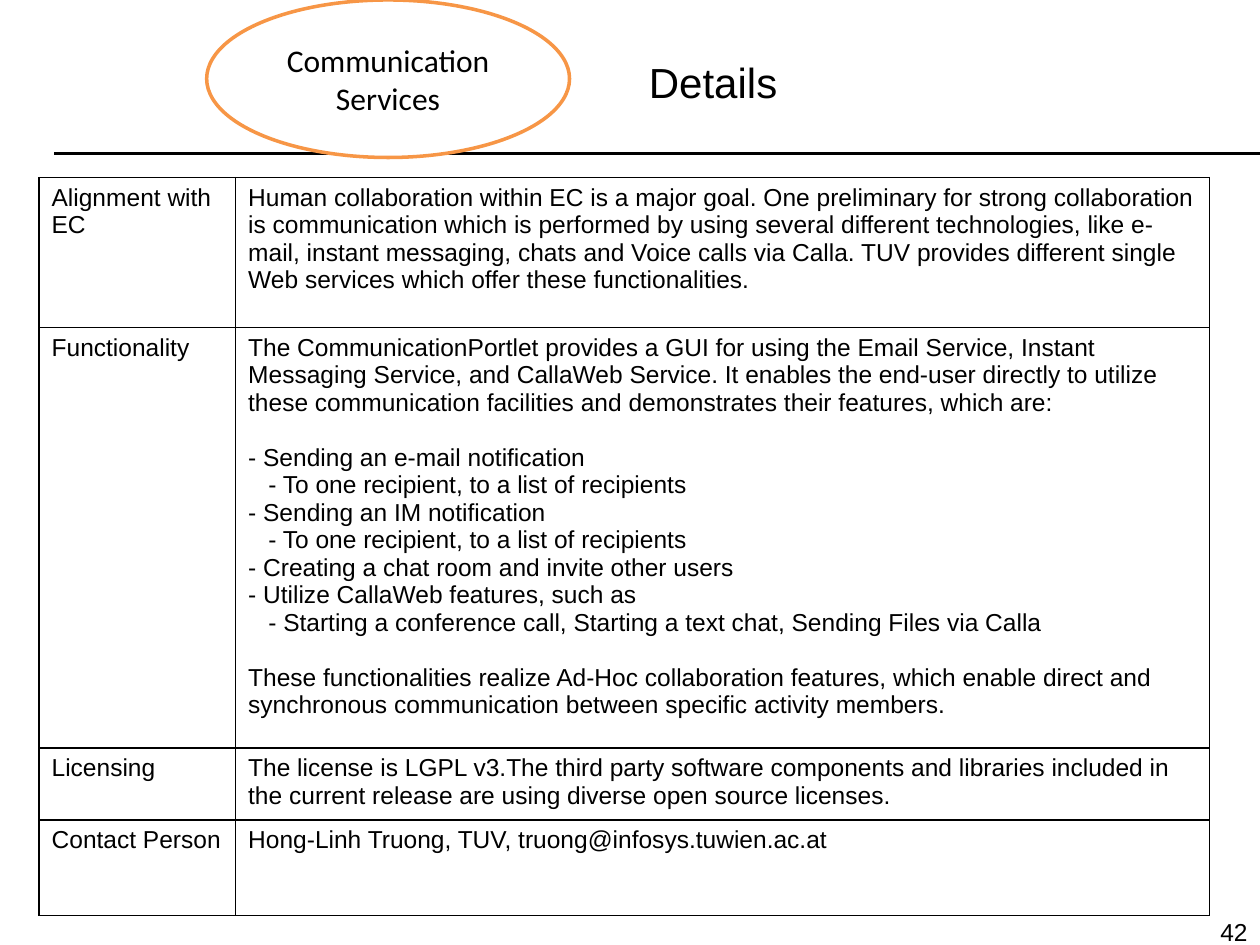
from lxml.etree import SubElement
from pptx import Presentation
from pptx.dml.color import RGBColor
from pptx.enum.shapes import MSO_CONNECTOR, MSO_SHAPE
from pptx.enum.text import MSO_ANCHOR, PP_ALIGN
from pptx.oxml.ns import qn
from pptx.util import Inches, Pt

BLACK = RGBColor(0x00, 0x00, 0x00)
WHITE = RGBColor(0xFF, 0xFF, 0xFF)
ORANGE = RGBColor(0xF7, 0x96, 0x46)

BODY_SIZE = 14
BLANK_LINE = Pt(15.7)
SUB_INDENT = Inches(0.16)

COLUMN_WIDTHS = [1.56, 7.73]
ROW_HEIGHTS = [1.19, 3.16, 0.57, 0.76]

# Each paragraph is (text, is a sub-item, has a gap above)
RECIPIENTS = ("- To one recipient, to a list of recipients", True, False)
DETAILS = [
    ("Alignment with EC", [
        ("Human collaboration within EC is a major goal. One preliminary for strong "
         "collaboration is communication which is performed by using several different "
         "technologies, like e-mail, instant messaging, chats and Voice calls via Calla. "
         "TUV provides different single Web services which offer these functionalities.",
         False, False),
    ]),
    ("Functionality", [
        ("The CommunicationPortlet provides a GUI for using the Email Service, Instant "
         "Messaging Service, and CallaWeb Service. It enables the end-user directly to "
         "utilize these communication facilities and demonstrates their features, "
         "which are:", False, False),
        ("- Sending an e-mail notification", False, True),
        RECIPIENTS,
        ("- Sending an IM notification", False, False),
        RECIPIENTS,
        ("- Creating a chat room and invite other users", False, False),
        ("- Utilize CallaWeb features, such as", False, False),
        ("- Starting a conference call, Starting a text chat, Sending Files via Calla",
         True, False),
        ("These functionalities realize Ad-Hoc collaboration features, which enable "
         "direct and synchronous communication between specific activity members.",
         False, True),
    ]),
    ("Licensing", [
        ("The license is LGPL v3.The third party software components and libraries "
         "included in the current release are using diverse open source licenses.",
         False, False),
    ]),
    ("Contact Person", [
        ("Hong-Linh Truong, TUV, truong@infosys.tuwien.ac.at", False, False),
    ]),
]


def add_run(paragraph, text, size, font="Arial"):
    run = paragraph.add_run()
    run.text = text
    run.font.size = Pt(size)
    run.font.name = font
    run.font.color.rgb = BLACK


def add_label(slide, box, text, size, align, anchor):
    frame = slide.shapes.add_textbox(*map(Inches, box)).text_frame
    frame.word_wrap = True
    frame.vertical_anchor = anchor
    frame.paragraphs[0].alignment = align
    add_run(frame.paragraphs[0], text, size)


def add_header_rule(slide, left, right, y):
    rule = slide.shapes.add_connector(
        MSO_CONNECTOR.STRAIGHT, Inches(left), Inches(y), Inches(right), Inches(y))
    rule.line.color.rgb = BLACK
    rule.line.width = Pt(1.75)
    SubElement(rule._element.spPr, qn("a:effectLst"))


def add_topic_ellipse(slide, box, text):
    ellipse = slide.shapes.add_shape(MSO_SHAPE.OVAL, *map(Inches, box))
    ellipse.shadow.inherit = False
    ellipse.fill.solid()
    ellipse.fill.fore_color.rgb = WHITE
    ellipse.line.color.rgb = ORANGE
    ellipse.line.width = Pt(2)
    frame = ellipse.text_frame
    frame.word_wrap = True
    frame.vertical_anchor = MSO_ANCHOR.MIDDLE
    frame.paragraphs[0].alignment = PP_ALIGN.CENTER
    add_run(frame.paragraphs[0], text, 18, "Calibri")


def style_cell(cell):
    """Give the cell black borders on all sides and no fill."""
    properties = cell._tc.get_or_add_tcPr()
    for side in ("lnL", "lnR", "lnT", "lnB"):
        border = SubElement(properties, qn(f"a:{side}"), w=str(Pt(1)))
        fill = SubElement(border, qn("a:solidFill"))
        SubElement(fill, qn("a:srgbClr"), val=str(BLACK))
    cell.fill.background()


def fill_cell(cell, paragraphs):
    style_cell(cell)
    frame = cell.text_frame
    for index, (text, is_sub_item, has_gap) in enumerate(paragraphs):
        paragraph = frame.add_paragraph() if index else frame.paragraphs[0]
        if is_sub_item:
            paragraph._p.get_or_add_pPr().set("marL", str(SUB_INDENT))
        if has_gap:
            paragraph.space_before = BLANK_LINE
        add_run(paragraph, text, BODY_SIZE)


def add_details_table(slide, left, top):
    table = slide.shapes.add_table(
        len(DETAILS), len(COLUMN_WIDTHS), Inches(left), Inches(top),
        Inches(sum(COLUMN_WIDTHS)), Inches(sum(ROW_HEIGHTS))).table
    table.first_row = False
    table.horz_banding = False
    for column, width in zip(table.columns, COLUMN_WIDTHS):
        column.width = Inches(width)
    for row, height, (heading, paragraphs) in zip(table.rows, ROW_HEIGHTS, DETAILS):
        row.height = Inches(height)
        fill_cell(row.cells[0], [(heading, False, False)])
        fill_cell(row.cells[1], paragraphs)


def main():
    presentation = Presentation()
    presentation.slide_width = Inches(10)
    presentation.slide_height = Inches(7.5)
    slide = presentation.slides.add_slide(presentation.slide_layouts[6])

    add_header_rule(slide, 0.43, 10, 1.22)
    add_label(slide, (7.67, 7.23, 2.33, 0.27), "42", 14, PP_ALIGN.RIGHT, MSO_ANCHOR.TOP)
    add_label(slide, (1.16, 0.16, 9, 0.98), "Details", 24, PP_ALIGN.CENTER,
              MSO_ANCHOR.MIDDLE)
    add_details_table(slide, 0.31, 1.41)
    add_topic_ellipse(slide, (1.64, 0, 2.88, 1.25), "Communication Services")

    presentation.save("out.pptx")


if __name__ == "__main__":
    main()
